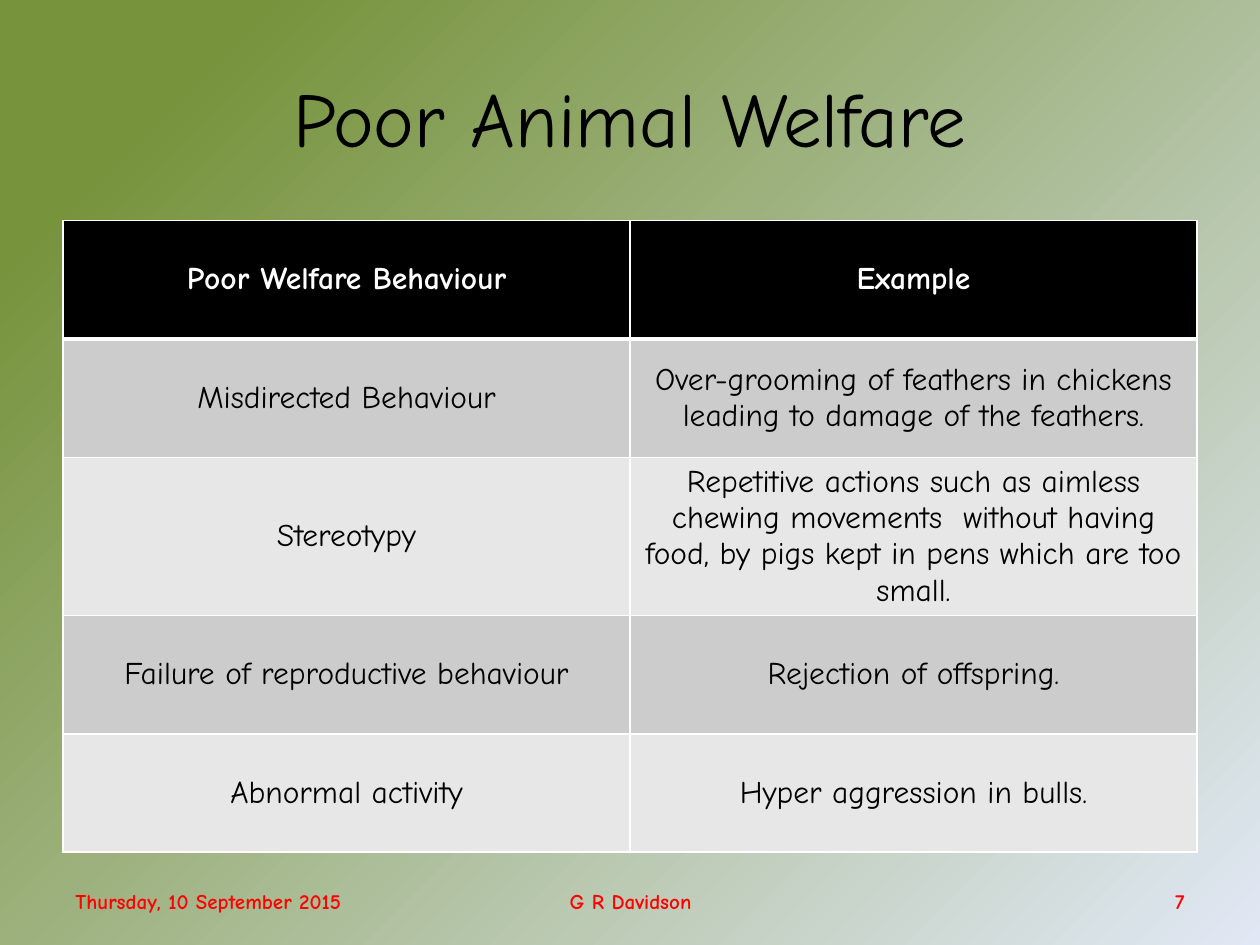
from lxml.etree import SubElement
from pptx import Presentation
from pptx.dml.color import RGBColor
from pptx.enum.text import MSO_ANCHOR, PP_ALIGN
from pptx.oxml.ns import qn
from pptx.util import Inches, Pt

FONT = "Comic Neue"
BLACK = RGBColor(0x00, 0x00, 0x00)
WHITE = RGBColor(0xFF, 0xFF, 0xFF)
RED = RGBColor(0xFF, 0x00, 0x00)
GREEN = RGBColor(0x77, 0x93, 0x3C)
PALE_BLUE = RGBColor(0xE1, 0xE8, 0xF5)
DARK_BAND = RGBColor(0xCC, 0xCC, 0xCC)
LIGHT_BAND = RGBColor(0xE7, 0xE7, 0xE7)

BEHAVIOURS = [
    ("Poor Welfare Behaviour", "Example"),
    ("Misdirected Behaviour",
     "Over-grooming of feathers in chickens leading to damage of the feathers."),
    ("Stereotypy",
     "Repetitive actions such as aimless chewing movements  without having food, "
     "by pigs kept in pens which are too small."),
    ("Failure of reproductive behaviour", "Rejection of offspring."),
    ("Abnormal activity", "Hyper aggression in bulls."),
]
FOOTERS = [
    ("Thursday, 10 September 2015", 0.5, 3.32, PP_ALIGN.LEFT),
    ("G R Davidson", 3.42, 3.17, PP_ALIGN.CENTER),
    ("7", 7.17, 2.33, PP_ALIGN.RIGHT),
]


class WelfarePage:
    def __init__(self, deck):
        self.page = deck.slides.add_slide(deck.slide_layouts[5])

    def background(self, start, end):
        fill = self.page.background.fill
        fill.gradient()
        fill.gradient_angle = 315
        for stop, position, color in zip(fill.gradient_stops, (0.12, 1), (start, end)):
            stop.position = position
            stop.color.rgb = color

    def add_text(self, frame, text, size, color, align=PP_ALIGN.CENTER, bold=False):
        frame.word_wrap = True
        para = frame.paragraphs[0]
        para.alignment = align
        span = para.add_run()
        span.text = text
        span.font.name = FONT
        span.font.size = Pt(size)
        span.font.bold = bold
        span.font.color.rgb = color

    def title(self, text):
        box = self.page.shapes.title
        box.left, box.top = Inches(0.5), Inches(0.3)
        box.width, box.height = Inches(9), Inches(1.25)
        box.text_frame.vertical_anchor = MSO_ANCHOR.MIDDLE
        self.add_text(box.text_frame, text, 44, BLACK)

    def footer(self, text, left, width, align):
        box = self.page.shapes.add_textbox(
            Inches(left), Inches(6.95), Inches(width), Inches(0.4))
        box.text_frame.vertical_anchor = MSO_ANCHOR.MIDDLE
        self.add_text(box.text_frame, text, 12, RED, align, bold=True)

    def borders(self, cell, top, bottom):
        """Draw white cell edges; top and bottom are widths in points."""
        properties = cell._tc.get_or_add_tcPr()
        for edge, width in (("L", 1), ("R", 1), ("T", top), ("B", bottom)):
            line = SubElement(properties, qn(f"a:ln{edge}"), w=str(Pt(width)))
            fill = SubElement(line, qn("a:solidFill"))
            SubElement(fill, qn("a:srgbClr"), val=str(WHITE))

    def table(self, rows):
        row_height = Inches(0.94)
        table = self.page.shapes.add_table(
            len(rows), 2, Inches(0.5), Inches(1.75),
            Inches(9), row_height * len(rows)).table
        for index, texts in enumerate(rows):
            table.rows[index].height = row_height
            header = index == 0
            band = BLACK if header else DARK_BAND if index % 2 else LIGHT_BAND
            for column, text in enumerate(texts):
                cell = table.cell(index, column)
                self.borders(cell, 3 if index == 1 else 1, 3 if header else 1)
                cell.fill.solid()
                cell.fill.fore_color.rgb = band
                cell.vertical_anchor = MSO_ANCHOR.MIDDLE
                self.add_text(cell.text_frame, text, 18,
                              WHITE if header else BLACK, bold=header)


def main():
    deck = Presentation()
    deck.slide_width, deck.slide_height = Inches(10), Inches(7.5)
    page = WelfarePage(deck)
    page.background(GREEN, PALE_BLUE)
    page.title("Poor Animal Welfare")
    page.table(BEHAVIOURS)
    for footer in FOOTERS:
        page.footer(*footer)
    deck.save("out.pptx")


if __name__ == "__main__":
    main()
